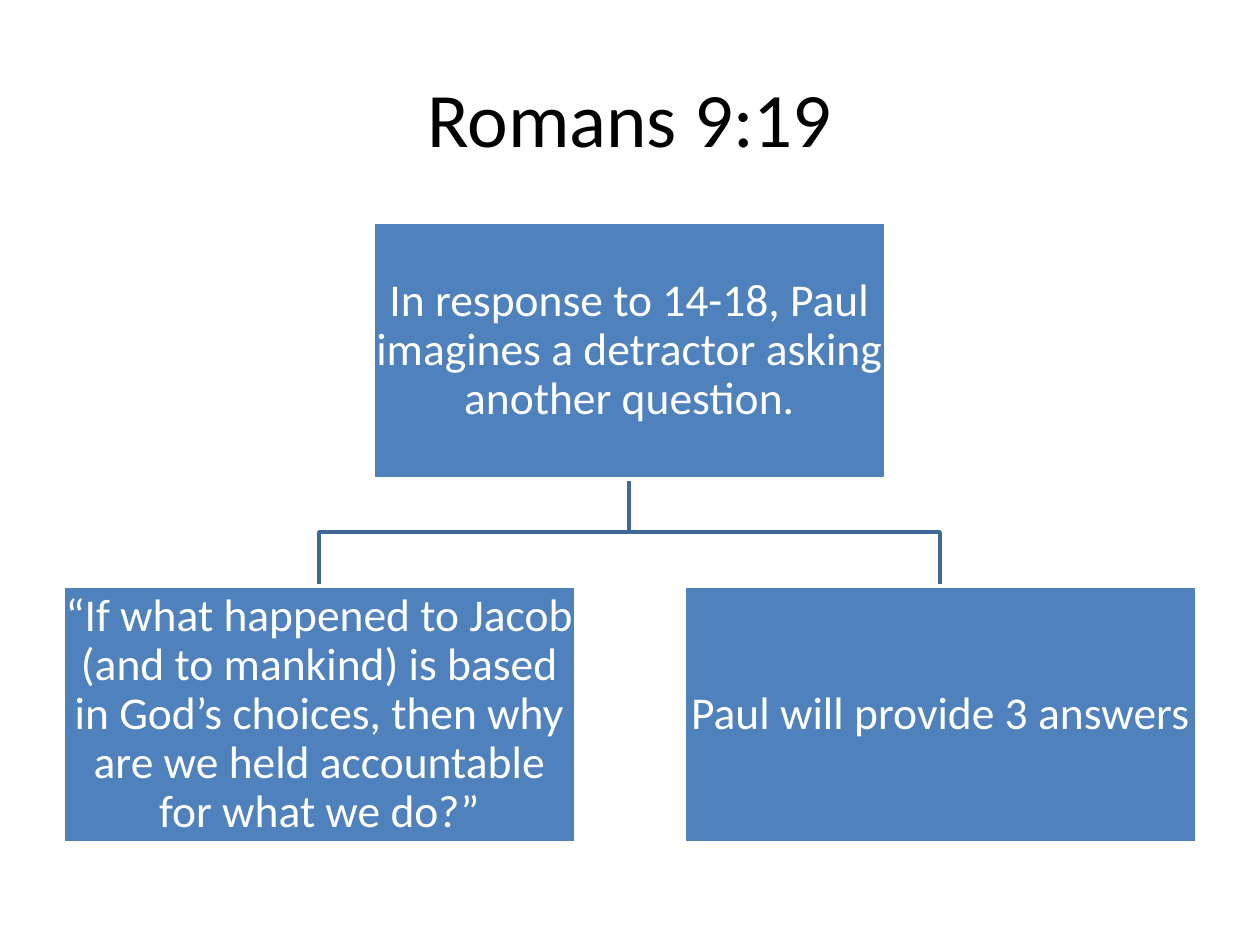
from dataclasses import dataclass

from pptx import Presentation
from pptx import util as u
from pptx.dml.color import RGBColor
from pptx.enum import shapes, text

SCALE = u.Inches(1) / 126
FONT = "Calibri"
BLACK = RGBColor(0x00, 0x00, 0x00)
WHITE = RGBColor(0xFF, 0xFF, 0xFF)
BOX_BLUE = RGBColor(0x4F, 0x81, 0xBD)
LINE_BLUE = RGBColor(0x3F, 0x67, 0x97)

BOX_WIDTH = 513
BOX_HEIGHT = 257
INSET = 2


@dataclass(frozen=True)
class Box:
    left: int
    top: int
    wording: str

    @property
    def center(self) -> int:
        return self.left + BOX_WIDTH // 2

    @property
    def bottom(self) -> int:
        return self.top + BOX_HEIGHT


QUESTION = Box(373, 222, "In response to 14-18, Paul imagines a detractor asking another question.")
REPLIES = (
    Box(
        63,
        586,
        "“If what happened to Jacob (and to mankind) is based in God’s choices, "
        "then why are we held accountable for what we do?”",
    ),
    Box(684, 586, "Paul will provide 3 answers"),
)


def px(length: int) -> u.Emu:
    return u.Emu(round(length * SCALE))


def format_paragraph(paragraph, size: int, color: RGBColor) -> None:
    paragraph.alignment = text.PP_ALIGN.CENTER
    paragraph.font.name = FONT
    paragraph.font.size = u.Pt(size)
    paragraph.font.color.rgb = color


def set_title(slide, wording: str) -> None:
    title = slide.shapes.title
    title.left, title.top, title.width, title.height = map(px, (63, 38, 1134, 158))
    title.text_frame.text = wording
    title.text_frame.vertical_anchor = text.MSO_ANCHOR.MIDDLE
    format_paragraph(title.text_frame.paragraphs[0], 44, BLACK)


def draw_branch(slide, parent: Box, child: Box) -> None:
    middle = (parent.bottom + child.top) // 2
    builder = slide.shapes.build_freeform(parent.center, parent.bottom, scale=SCALE)
    builder.add_line_segments(
        [(parent.center, middle), (child.center, middle), (child.center, child.top)],
        close=False,
    )
    shape = builder.convert_to_shape()
    shape.shadow.inherit = False
    shape.fill.background()
    shape.line.color.rgb = LINE_BLUE
    shape.line.width = u.Pt(2)


def draw_box(slide, box: Box) -> None:
    shape = slide.shapes.add_shape(
        shapes.MSO_SHAPE.RECTANGLE,
        px(box.left), px(box.top), px(BOX_WIDTH), px(BOX_HEIGHT),
    )
    shape.shadow.inherit = False
    shape.fill.solid()
    shape.fill.fore_color.rgb = BOX_BLUE
    shape.line.color.rgb = WHITE
    shape.line.width = u.Pt(2)
    frame = shape.text_frame
    frame.word_wrap = True
    frame.vertical_anchor = text.MSO_ANCHOR.MIDDLE
    frame.margin_left = frame.margin_right = px(INSET)
    frame.margin_top = frame.margin_bottom = px(INSET)
    frame.text = box.wording
    paragraph = frame.paragraphs[0]
    paragraph.line_spacing = 0.9
    format_paragraph(paragraph, 26, WHITE)


def main() -> None:
    presentation = Presentation()
    presentation.slide_width = px(1260)
    presentation.slide_height = px(945)
    slide = presentation.slides.add_slide(presentation.slide_layouts[5])
    set_title(slide, "Romans 9:19")
    for reply in REPLIES:
        draw_branch(slide, QUESTION, reply)
    for box in (QUESTION, *REPLIES):
        draw_box(slide, box)
    presentation.save("out.pptx")


if __name__ == "__main__":
    main()
